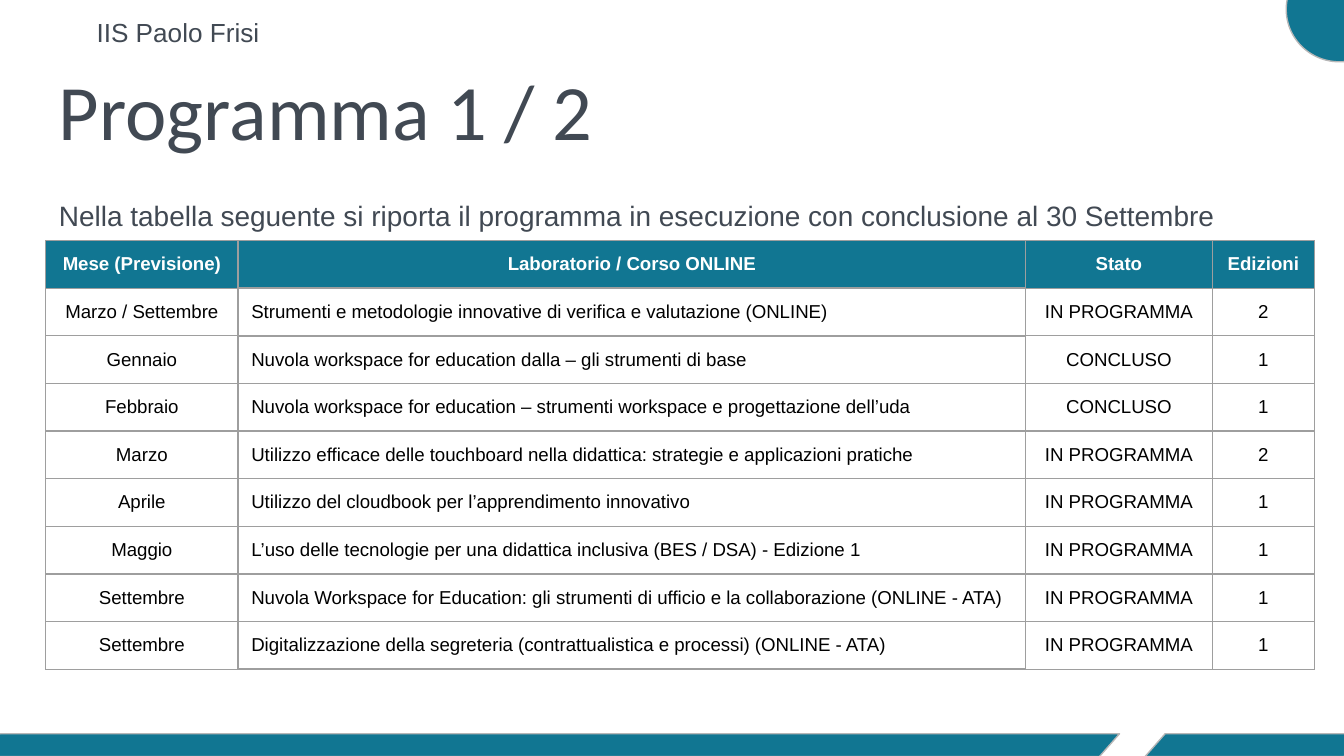
from dataclasses import dataclass

import pptx
import pptx.dml.color
import pptx.enum.shapes
import pptx.enum.text
import pptx.oxml.ns
import pptx.slide
import pptx.table
import pptx.util
from lxml import etree
from pptx.util import Inches

TEAL = "117692"
SLATE = "414953"
WHITE = "FFFFFF"
BLACK = "000000"
LINE_GRAY = "B7B7B7"
GRID_GRAY = "9E9E9E"
ALIGN = pptx.enum.text.PP_ALIGN
ANCHOR = pptx.enum.text.MSO_ANCHOR
SHAPE = pptx.enum.shapes.MSO_SHAPE

SLIDE_WIDTH = 10
SLIDE_HEIGHT = SLIDE_WIDTH * 9 / 16
COLUMN_WIDTHS = (1.43, 5.86, 1.39, 0.76)
COURSE_COLUMN = 1
TABLE_LEFT, TABLE_TOP, TABLE_HEIGHT = 0.34, 1.79, 3.19
HEADER = ("Mese (Previsione)", "Laboratorio / Corso ONLINE", "Stato", "Edizioni")


@dataclass(frozen=True)
class Box:
    left: float
    top: float
    width: float
    height: float

    def lengths(self) -> tuple[pptx.util.Length, ...]:
        return tuple(Inches(value) for value in (self.left, self.top, self.width, self.height))


@dataclass(frozen=True)
class Label:
    box: Box
    text: str
    size: float
    font: str = "Arial"
    anchor: ANCHOR = ANCHOR.TOP
    line_spacing: float = 1.0


@dataclass(frozen=True)
class Decoration:
    kind: SHAPE
    box: Box
    adjustment: float | None = None


@dataclass(frozen=True)
class Course:
    month: str
    title: str
    status: str
    editions: int

    def texts(self) -> tuple[str, ...]:
        return self.month, self.title, self.status, str(self.editions)


PLANNED = "IN PROGRAMMA"
DONE = "CONCLUSO"
COURSES = (
    Course("Marzo / Settembre", "Strumenti e metodologie innovative di verifica e valutazione (ONLINE)", PLANNED, 2),
    Course("Gennaio", "Nuvola workspace for education dalla – gli strumenti di base", DONE, 1),
    Course("Febbraio", "Nuvola workspace for education – strumenti workspace e progettazione dell’uda", DONE, 1),
    Course("Marzo", "Utilizzo efficace delle touchboard nella didattica: strategie e applicazioni pratiche", PLANNED, 2),
    Course("Aprile", "Utilizzo del cloudbook per l’apprendimento innovativo", PLANNED, 1),
    Course("Maggio", "L’uso delle tecnologie per una didattica inclusiva (BES / DSA) - Edizione 1", PLANNED, 1),
    Course("Settembre", "Nuvola Workspace for Education: gli strumenti di ufficio e la collaborazione (ONLINE - ATA)", PLANNED, 1),
    Course("Settembre", "Digitalizzazione della segreteria (contrattualistica e processi) (ONLINE - ATA)", PLANNED, 1),
)

DECORATIONS = (
    Decoration(SHAPE.PARALLELOGRAM, Box(-0.15, 5.46, 8.48, 0.17), 0.88),
    Decoration(SHAPE.PARALLELOGRAM, Box(8.52, 5.46, 1.63, 0.17), 0.88),
    Decoration(SHAPE.OVAL, Box(9.57, -0.32, 0.79, 0.78)),
)

LABELS = (
    Label(Box(0.62, 0.02, 2.14, 0.4), "IIS Paolo Frisi", 14),
    Label(
        Box(0.34, 1.34, 9.32, 3.67),
        "Nella tabella seguente si riporta il programma in esecuzione con conclusione al 30 Settembre",
        15,
        line_spacing=1.15,
    ),
    Label(Box(0.34, 0.35, 9.32, 0.91), "Programma 1 / 2", 42, "Calibri", ANCHOR.BOTTOM),
)


def rgb(color: str) -> pptx.dml.color.RGBColor:
    return pptx.dml.color.RGBColor.from_string(color)


def add_run(paragraph, text: str, size: float, color: str, font: str = "Arial", bold: bool = False) -> None:
    run = paragraph.add_run()
    run.text = text
    run.font.name = font
    run.font.size = pptx.util.Pt(size)
    run.font.bold = bold
    run.font.color.rgb = rgb(color)


def set_margins(container, bottom: float = 0.1) -> None:
    """Set the inner margins of a text frame or a table cell."""
    for side in ("left", "top", "right"):
        setattr(container, f"margin_{side}", Inches(0.1))
    container.margin_bottom = Inches(bottom)


def add_decoration(slide: pptx.slide.Slide, decoration: Decoration) -> None:
    shape = slide.shapes.add_shape(decoration.kind, *decoration.box.lengths())
    shape.shadow.inherit = False
    if decoration.adjustment is not None:
        shape.adjustments[0] = decoration.adjustment
    shape.fill.solid()
    shape.fill.fore_color.rgb = rgb(TEAL)
    shape.line.color.rgb = rgb(LINE_GRAY)
    shape.line.width = pptx.util.Pt(0.75)


def add_label(slide: pptx.slide.Slide, label: Label) -> None:
    frame = slide.shapes.add_textbox(*label.box.lengths()).text_frame
    frame.word_wrap = True
    frame.vertical_anchor = label.anchor
    set_margins(frame)
    paragraph = frame.paragraphs[0]
    paragraph.line_spacing = label.line_spacing
    add_run(paragraph, label.text, label.size, SLATE, label.font)


def set_borders(cell: pptx.table._Cell, vertical: float, horizontal: float) -> None:
    properties = cell._tc.get_or_add_tcPr()
    qualified = pptx.oxml.ns.qn
    for side in "LRTB":
        width = vertical if side in "LR" else horizontal
        line = etree.SubElement(properties, qualified(f"a:ln{side}"), w=str(pptx.util.Pt(width)))
        fill = etree.SubElement(line, qualified("a:solidFill"))
        etree.SubElement(fill, qualified("a:srgbClr"), val=GRID_GRAY)


def fill_cell(cell: pptx.table._Cell, text: str, is_header: bool, is_course: bool) -> None:
    is_course_title = is_course and not is_header
    set_margins(cell, bottom=0.08)
    set_borders(cell, 0.75, 1 if is_course_title else 0.75)
    if is_header:
        cell.fill.solid()
        cell.fill.fore_color.rgb = rgb(TEAL)
    else:
        cell.fill.background()
    paragraph = cell.text_frame.paragraphs[0]
    paragraph.alignment = ALIGN.LEFT if is_course_title else ALIGN.CENTER
    add_run(paragraph, text, 10, WHITE if is_header else BLACK, bold=is_header)


def add_program_table(slide: pptx.slide.Slide) -> None:
    rows = (HEADER, *(course.texts() for course in COURSES))
    box = Box(TABLE_LEFT, TABLE_TOP, sum(COLUMN_WIDTHS), TABLE_HEIGHT)
    table = slide.shapes.add_table(len(rows), len(HEADER), *box.lengths()).table
    table.horz_banding = False
    for column, width in zip(table.columns, COLUMN_WIDTHS):
        column.width = Inches(width)
    for row_index, texts in enumerate(rows):
        table.rows[row_index].height = Inches(TABLE_HEIGHT / len(rows))
        for column_index, text in enumerate(texts):
            cell = table.cell(row_index, column_index)
            fill_cell(cell, text, row_index == 0, column_index == COURSE_COLUMN)


def main() -> None:
    presentation = pptx.Presentation()
    presentation.slide_width = Inches(SLIDE_WIDTH)
    presentation.slide_height = Inches(SLIDE_HEIGHT)
    slide = presentation.slides.add_slide(presentation.slide_layouts[6])
    for decoration in DECORATIONS:
        add_decoration(slide, decoration)
    for label in LABELS:
        add_label(slide, label)
    add_program_table(slide)
    presentation.save("out.pptx")


if __name__ == "__main__":
    main()
